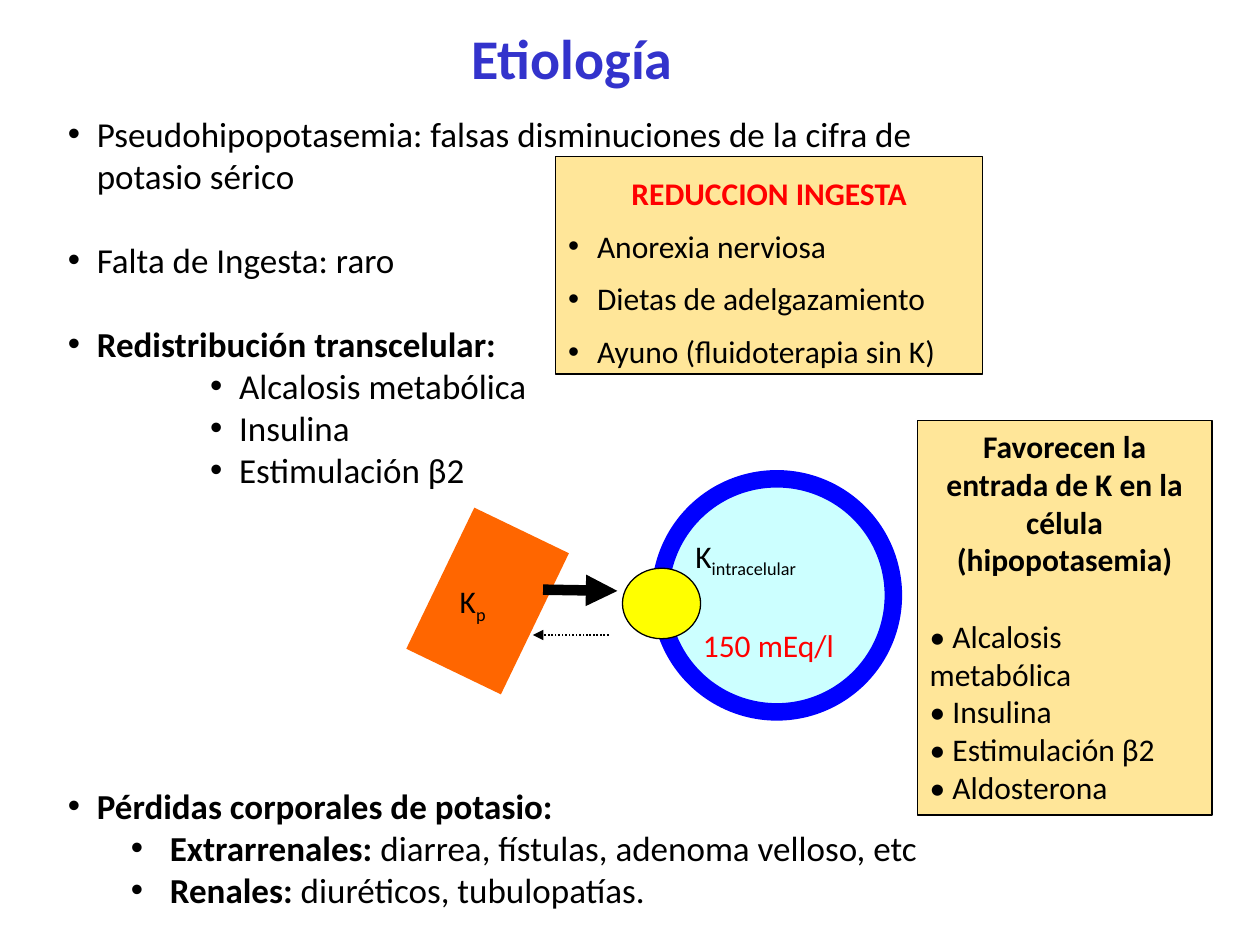
from dataclasses import dataclass
from typing import Optional, Sequence

from lxml import etree
from pptx import Presentation
from pptx.dml.color import RGBColor
from pptx.enum import dml, shapes, text
from pptx.oxml.ns import qn
from pptx.util import Inches, Pt

BLACK = RGBColor(0, 0, 0)
RED = RGBColor(0xFF, 0, 0)
INDIGO = RGBColor(0x33, 0x33, 0xCC)
BLUE = RGBColor(0, 0, 0xFF)
CYAN = RGBColor(0xCC, 0xFF, 0xFF)
YELLOW = RGBColor(0xFF, 0xFF, 0)
ORANGE = RGBColor(0xFF, 0x66, 0)
SAND = RGBColor(0xFF, 0xE6, 0x99)

CENTER = text.PP_ALIGN.CENTER
LEFT = text.PP_ALIGN.LEFT
RECTANGLE = shapes.MSO_SHAPE.RECTANGLE
OVAL = shapes.MSO_SHAPE.OVAL
BODY_LINE = 24
PANEL_LINE = 22


@dataclass
class Span:
    words: str
    bold: Optional[bool] = None
    subscript: bool = False


@dataclass
class Para:
    spans: Sequence[Span]
    size: int = 18
    color: RGBColor = BLACK
    bold: bool = False
    align: text.PP_ALIGN = LEFT
    spacing: float = 1.0
    before: float = 0
    margin: float = 0
    hanging: float = 0
    level: int = 0


@dataclass
class Arrow:
    start: tuple[float, float]
    end: tuple[float, float]
    color: RGBColor
    width: float
    head: bool = True
    dotted: bool = False


def add_bullet(para, margin: float, hanging: float) -> None:
    props = para._p.get_or_add_pPr()
    props.set("marL", str(Inches(margin)))
    props.set("indent", str(-Inches(hanging)))
    etree.SubElement(props, qn("a:buFont")).set("typeface", "Arial")
    etree.SubElement(props, qn("a:buChar")).set("char", "•")


def write(frame, paras: Sequence[Para]) -> None:
    for index, item in enumerate(paras):
        para = frame.paragraphs[0] if index == 0 else frame.add_paragraph()
        para.alignment = item.align
        para.level = item.level
        para.line_spacing = item.spacing
        para.space_before = Pt(item.before)
        para.font.name = "Calibri"
        para.font.size = Pt(item.size)
        para.font.bold = item.bold
        para.font.color.rgb = item.color
        if item.hanging:
            add_bullet(para, item.margin, item.hanging)
        for part in item.spans:
            span = para.add_run()
            span.text = part.words
            # Run fonts repeat the paragraph's, which some viewers ignore.
            span.font.name = "Calibri"
            span.font.size = Pt(item.size)
            span.font.color.rgb = item.color
            span.font.bold = item.bold if part.bold is None else part.bold
            if part.subscript:
                span._r.get_or_add_rPr().set("baseline", "-25000")


def add_text(page, left: float, top: float, width: float, height: float,
             paras: Sequence[Para], wrap: bool = True,
             anchor: text.MSO_ANCHOR = text.MSO_ANCHOR.TOP) -> None:
    box = page.shapes.add_textbox(Inches(left), Inches(top), Inches(width), Inches(height))
    box.text_frame.word_wrap = wrap
    box.text_frame.vertical_anchor = anchor
    write(box.text_frame, paras)


def add_figure(page, kind: shapes.MSO_SHAPE, left: float, top: float, width: float,
               height: float, fill: RGBColor, line: RGBColor = BLACK,
               weight: float = 0.75, paras: Sequence[Para] = ()) -> None:
    figure = page.shapes.add_shape(kind, Inches(left), Inches(top), Inches(width), Inches(height))
    figure.shadow.inherit = False
    figure.fill.solid()
    figure.fill.fore_color.rgb = fill
    figure.line.color.rgb = line
    figure.line.width = Pt(weight)
    figure.text_frame.word_wrap = True
    figure.text_frame.vertical_anchor = text.MSO_ANCHOR.TOP
    write(figure.text_frame, paras)


def add_arrow(page, arrow: Arrow) -> None:
    ends = [Inches(value) for value in (*arrow.start, *arrow.end)]
    line = page.shapes.add_connector(shapes.MSO_CONNECTOR.STRAIGHT, *ends)
    line.line.color.rgb = arrow.color
    line.line.width = Pt(arrow.width)
    if arrow.dotted:
        line.line.dash_style = dml.MSO_LINE.ROUND_DOT
    if arrow.head:
        etree.SubElement(line.line._get_or_add_ln(), qn("a:tailEnd")).set("type", "triangle")
    etree.SubElement(line._element.spPr, qn("a:effectLst"))


def topic(words: str, bold: bool = False, blank_lines: int = 0) -> Para:
    return Para([Span(words)], 20, bold=bold, before=blank_lines * BODY_LINE,
                margin=0.23, hanging=0.23)


def cause(words: str) -> Para:
    return Para([Span(words)], 20, margin=1.36, hanging=0.23, level=3)


def loss(label: str, detail: str) -> Para:
    return Para([Span(label, bold=True), Span(detail)], 20, margin=0.81, hanging=0.31, level=1)


def potassium(place: str) -> list[Para]:
    return [Para([Span("K"), Span(place, subscript=True)])]


TITLE = [Para([Span("Etiología")], 32, INDIGO, True, CENTER, 0.9)]
BODY = [
    topic("Pseudohipopotasemia: falsas disminuciones de la cifra de potasio sérico"),
    topic("Falta de Ingesta: raro", blank_lines=1),
    topic("Redistribución transcelular:", bold=True, blank_lines=1),
    *map(cause, ("Alcalosis metabólica", "Insulina", "Estimulación β2")),
    topic("Pérdidas corporales de potasio:", bold=True, blank_lines=7),
    loss("Extrarrenales:", " diarrea, fístulas, adenoma velloso, etc"),
    loss("Renales: ", "diuréticos, tubulopatías."),
]
ENTRY_HEADING = ("Favorecen la entrada de K en la célula", "(hipopotasemia)")
ENTRY_FACTORS = ("Alcalosis metabólica", "Insulina", "Estimulación β2", "Aldosterona")
ENTRY = [Para([Span(words)], bold=True, align=CENTER) for words in ENTRY_HEADING] + [
    Para([Span(f"• {words}")], before=0 if index else PANEL_LINE)
    for index, words in enumerate(ENTRY_FACTORS)
]
INTAKE_CAUSES = ("Anorexia nerviosa", "Dietas de adelgazamiento", "Ayuno (fluidoterapia sin K)")
INTAKE = [Para([Span("REDUCCION INGESTA")], color=RED, bold=True, align=CENTER, spacing=1.3)] + [
    Para([Span(words)], spacing=1.4, margin=0.23, hanging=0.23) for words in INTAKE_CAUSES
]

PLASMA = Arrow((3.6, 5.33), (4.14, 4.21), ORANGE, 60, head=False)
INFLOW = Arrow((4.31, 4.68), (4.9, 4.69), BLACK, 6)
OUTFLOW = Arrow((4.83, 5.04), (4.23, 5.04), BLACK, 1, dotted=True)


def main() -> None:
    deck = Presentation()
    deck.slide_width, deck.slide_height = Inches(10), Inches(7.5)
    page = deck.slides.add_slide(deck.slide_layouts[6])

    add_text(page, 0.23, 0.05, 8.62, 0.87, TITLE, anchor=text.MSO_ANCHOR.MIDDLE)
    add_text(page, 0.44, 0.84, 7.66, 6.5, BODY)
    add_arrow(page, PLASMA)
    add_figure(page, RECTANGLE, 7.28, 3.34, 2.34, 3.13, SAND, paras=ENTRY)
    add_text(page, 3.55, 4.57, 0.71, 0.4, potassium("p"))
    add_figure(page, OVAL, 5.24, 3.8, 1.85, 1.85, CYAN, BLUE, 10)
    add_figure(page, OVAL, 4.94, 4.51, 0.62, 0.56, YELLOW)
    add_arrow(page, INFLOW)
    add_arrow(page, OUTFLOW)
    add_text(page, 5.42, 4.21, 1.88, 0.4, potassium("intracelular"))
    add_text(page, 5.48, 4.92, 1.25, 0.4, [Para([Span("150 mEq/l")], color=RED)], wrap=False)
    add_figure(page, RECTANGLE, 4.41, 1.24, 3.39, 1.73, SAND, paras=INTAKE)
    deck.save("out.pptx")


if __name__ == "__main__":
    main()
